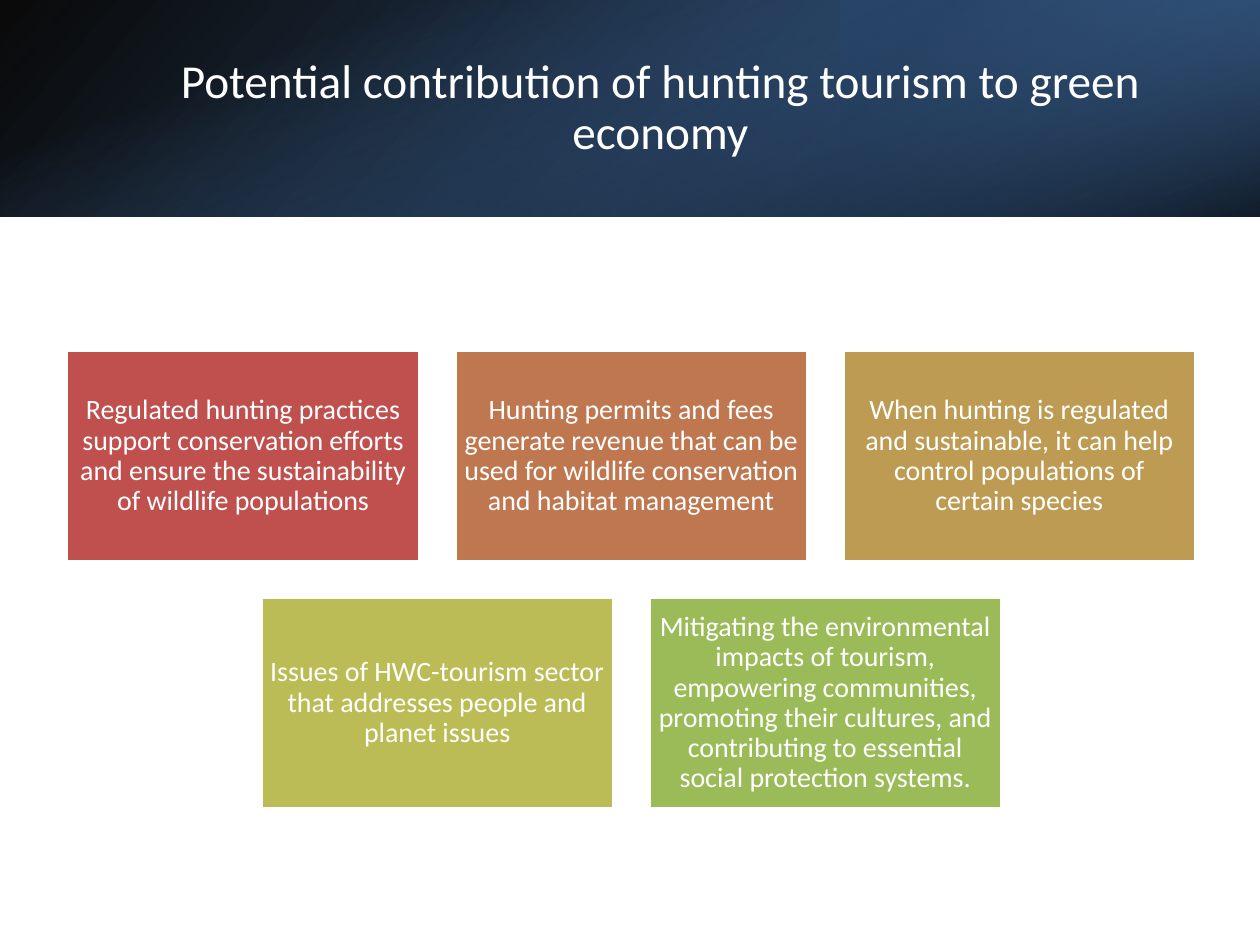
from lxml.etree import SubElement
from pptx import Presentation
from pptx.dml.color import RGBColor
from pptx.enum.shapes import MSO_SHAPE
from pptx.enum.text import MSO_ANCHOR, MSO_AUTO_SIZE, PP_ALIGN
from pptx.oxml.ns import qn
from pptx.util import Inches, Pt

# Content
TITLE = "Potential contribution of hunting tourism to green economy"
ROWS = [
    [("Regulated hunting practices support conservation efforts and ensure "
      "the sustainability of wildlife populations", "C0504D"),
     ("Hunting permits and fees generate revenue that can be used for "
      "wildlife conservation and habitat management", "BF7750"),
     ("When hunting is regulated and sustainable, it can help control "
      "populations of certain species", "BD9B53")],
    [("Issues of HWC-tourism sector that addresses people and planet issues",
      "BCBC56"),
     ("Mitigating the environmental impacts of tourism, empowering "
      "communities, promoting their cultures, and contributing to essential "
      "social protection systems.", "9BBB59")],
]
# Header layers: place, rotation, flip, angle, stops (position, colour, opacity)
BANDS = [
    ((0, 0, 10, 1.72), 0, True, 140,
     [(0, "000000", 96), (100, "376092", 100)]),
    ((6.67, 0, 3.33, 1.72), 180, True, 320,
     [(19, "254061", 68), (100, "4F81BD", 79)]),
    ((4.14, -4.14, 1.72, 10), 90, False, 340,
     [(23, "4F81BD", 0), (99, "000000", 74)]),
]
WIDE, HIGH, GAP = 2.8, 1.68, 0.28
MID, TOP = 5.01, 2.78


def color(code):
    return RGBColor.from_string(code)


def add_rect(slide, place):
    rect = slide.shapes.add_shape(MSO_SHAPE.RECTANGLE, *map(Inches, place))
    rect.shadow.inherit = False
    return rect


def add_band(slide, place, turn, flip, angle, stops):
    band = add_rect(slide, place)
    band.rotation = turn
    band.line.fill.background()
    props = band._element.spPr
    if flip:
        props.xfrm.set("flipH", "1")
    # Gradient with transparent stops
    band.fill.gradient()
    grad = props.find(qn("a:gradFill"))
    for part in list(grad):
        grad.remove(part)
    grad.set("rotWithShape", "1")
    group = SubElement(grad, qn("a:gsLst"))
    for pos, code, alpha in stops:
        stop = SubElement(group, qn("a:gs"), pos=str(pos * 1000))
        tone = SubElement(stop, qn("a:srgbClr"), val=code)
        SubElement(tone, qn("a:alpha"), val=str(alpha * 1000))
    SubElement(grad, qn("a:lin"), ang=str(angle * 60000), scaled="0")


def set_text(shape, text, size):
    frame = shape.text_frame
    frame.text = text
    frame.word_wrap = True
    frame.auto_size = MSO_AUTO_SIZE.NONE
    frame.vertical_anchor = MSO_ANCHOR.MIDDLE
    para = frame.paragraphs[0]
    para.alignment = PP_ALIGN.CENTER
    para.line_spacing = 0.9
    para.font.name = "Calibri"
    para.font.size = Pt(size)
    para.font.color.rgb = color("FFFFFF")
    return frame


def add_card(slide, left, top, text, code):
    card = add_rect(slide, (left, top, WIDE, HIGH))
    card.fill.solid()
    card.fill.fore_color.rgb = color(code)
    card.line.color.rgb = color("FFFFFF")
    card.line.width = Pt(2)
    frame = set_text(card, text, 16)
    frame.margin_left = frame.margin_right = Inches(0.07)
    frame.margin_top = frame.margin_bottom = Inches(0.07)


def main():
    deck = Presentation()
    deck.slide_width, deck.slide_height = Inches(10), Inches(7.5)
    slide = deck.slides.add_slide(deck.slide_layouts[5])

    # Header
    for band in BANDS:
        add_band(slide, *band)
    title = slide.shapes.title
    title.left, title.top = Inches(1.12), Inches(0.38)
    title.width, title.height = Inches(8.24), Inches(0.96)
    set_text(title, TITLE, 27)
    slide.shapes._spTree.append(title._element)  # in front of the bands

    # Cards, each row centred
    for row, cards in enumerate(ROWS):
        start = MID - (len(cards) * (WIDE + GAP) - GAP) / 2
        top = TOP + row * (HIGH + GAP)
        for col, (text, code) in enumerate(cards):
            add_card(slide, start + col * (WIDE + GAP), top, text, code)

    deck.save("out.pptx")


if __name__ == "__main__":
    main()
